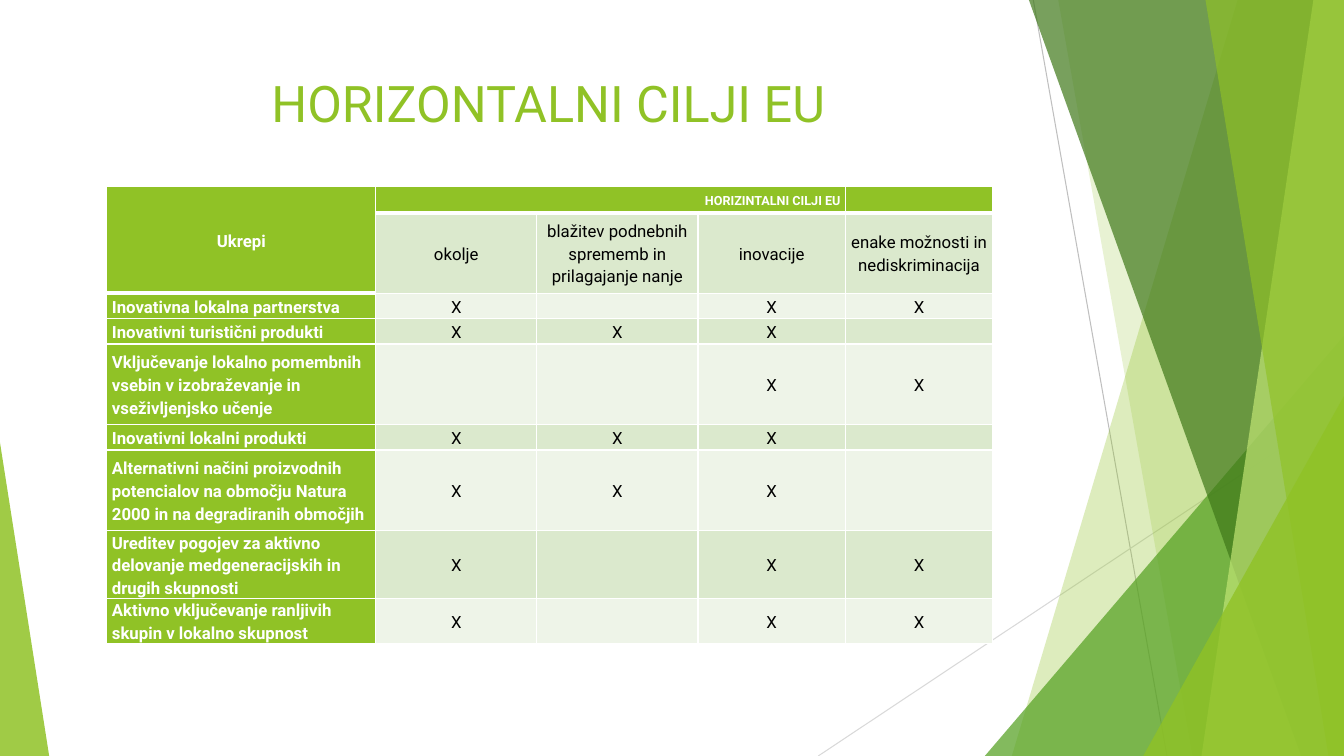
from dataclasses import dataclass

from lxml.etree import SubElement
from pptx import Presentation
from pptx.dml.color import RGBColor
from pptx.enum.shapes import MSO_CONNECTOR, MSO_SHAPE
from pptx.enum.text import MSO_ANCHOR, PP_ALIGN
from pptx.oxml.ns import qn
from pptx.util import Cm, Pt


@dataclass(frozen=True)
class Theme:
    font: str = "Roboto"
    title_size: int = 36
    body_size: int = 12
    small_size: int = 9
    lime: str = "90C226"
    green: str = "54A021"
    forest: str = "3F7819"
    pale_lime: str = "C0E474"
    band_dark: str = "DBE9CD"
    band_light: str = "EEF4E8"
    white: str = "FFFFFF"
    black: str = "000000"
    line_dark: str = "BFBFBF"
    line_light: str = "D9D9D9"


@dataclass(frozen=True)
class Box:
    """A region of the slide, in centimetres."""
    left: float
    top: float
    width: float
    height: float

    @property
    def right(self):
        return self.left + self.width

    @property
    def bottom(self):
        return self.top + self.height


THEME = Theme()
PAGE = Box(0, 0, 33.87, 19.05)
TITLE = Box(1.88, 1.7, 23.88, 3.66)
TABLE = Box(2.69, 4.7, 22.33, 11.15)

COLUMN_WIDTHS = [6.78, 4.06, 4.06, 3.72, 3.71]
ROW_HEIGHTS = [0.66, 2.03, 0.64, 0.64, 2.03, 0.64, 2.03, 1.5, 0.98]
GOALS = [
    "okolje",
    "blažitev podnebnih sprememb in prilagajanje nanje",
    "inovacije",
    "enake možnosti in nediskriminacija",
]
# Each measure with one mark per goal it serves
MEASURES = [
    ("Inovativna lokalna partnerstva", "X-XX"),
    ("Inovativni turistični produkti", "XXX-"),
    ("Vključevanje lokalno pomembnih vsebin v izobraževanje in vseživljenjsko učenje", "--XX"),
    ("Inovativni lokalni produkti", "XXX-"),
    ("Alternativni načini proizvodnih potencialov na območju Natura 2000 "
     "in na degradiranih območjih", "XXX-"),
    ("Ureditev pogojev za aktivno delovanje medgeneracijskih in drugih skupnosti", "X-XX"),
    ("Aktivno vključevanje ranljivih skupin v lokalno skupnost", "X-XX"),
]


def rgb(color):
    return RGBColor.from_string(color)


def style_font(font, size, color, bold=False):
    font.name = THEME.font
    font.size = Pt(size)
    font.bold = bold
    font.color.rgb = rgb(color)


def paint(shape, color, opacity):
    """Fill a shape with a see-through colour, without outline or shadow."""
    shape.shadow.inherit = False
    shape.line.fill.background()
    shape.fill.solid()
    shape.fill.fore_color.rgb = rgb(color)
    tint = shape.fill._xPr.find(qn("a:solidFill"))[0]
    SubElement(tint, qn("a:alpha"), val=str(opacity * 1000))


def add_ray(slide, start, end, color):
    ray = slide.shapes.add_connector(
        MSO_CONNECTOR.STRAIGHT, *(Cm(value) for value in start + end))
    ray.line.color.rgb = rgb(color)
    ray.line.width = Pt(0.75)
    SubElement(ray._element.spPr, qn("a:effectLst"))


def add_blade(slide, box, top_x, bottom_x, color, opacity):
    """Draw a slanted facet that fills the box up to its right side."""
    corners = [(top_x, box.top), (box.right, box.top),
               (box.right, box.bottom), (bottom_x, box.bottom)]
    points = [(Cm(x), Cm(y)) for x, y in corners]
    builder = slide.shapes.build_freeform(*points[0])
    builder.add_line_segments(points[1:], close=True)
    paint(builder.convert_to_shape(), color, opacity)


def add_corner(slide, box, apex, color, opacity):
    """Draw a triangle whose apex lies at a share of the box width."""
    triangle = slide.shapes.add_shape(
        MSO_SHAPE.ISOSCELES_TRIANGLE,
        Cm(box.left), Cm(box.top), Cm(box.width), Cm(box.height))
    triangle.adjustments[0] = apex
    paint(triangle, color, opacity)


def add_right_corner(slide, page, left, top, color, opacity):
    box = Box(left, top, page.right - left, page.bottom - top)
    add_corner(slide, box, 1, color, opacity)


def add_facets(slide, page):
    """Draw the faceted decoration along both sides of the page."""
    add_ray(slide, (page.right - 7.83, page.top), (page.right - 4.46, page.bottom),
            THEME.line_dark)
    add_ray(slide, (page.right, page.top + 10.24), (page.right - 13.25, page.bottom),
            THEME.line_light)
    add_blade(slide, page, page.right - 2.68, page.right - 8.37, THEME.lime, 30)
    add_blade(slide, page, page.right - 7.2, page.right - 3.82, THEME.lime, 20)
    add_right_corner(slide, page, page.right - 9.05, page.top + 8.46, THEME.green, 72)
    add_blade(slide, page, page.right - 7.94, page.right - 1.08, THEME.forest, 70)
    add_blade(slide, page, page.right - 0.77, page.right - 3.59, THEME.pale_lime, 70)
    add_blade(slide, page, page.right - 3.49, page.right - 0.39, THEME.lime, 65)
    add_right_corner(slide, page, page.right - 5.06, page.top + 9.98, THEME.lime, 80)
    add_corner(slide, Box(page.left, page.bottom - 7.9, 1.24, 7.9), 0, THEME.lime, 85)


def fill_title(slide, box):
    title = slide.shapes.title
    title.left, title.top = Cm(box.left), Cm(box.top)
    title.width, title.height = Cm(box.width), Cm(box.height)
    frame = title.text_frame
    frame.text = "HORIZONTALNI CILJI EU"
    frame.word_wrap = True
    frame.vertical_anchor = MSO_ANCHOR.TOP
    para = frame.paragraphs[0]
    para.alignment = PP_ALIGN.CENTER
    style_font(para.font, THEME.title_size, THEME.lime)


def draw_borders(cell, bottom_width):
    properties = cell._tc.get_or_add_tcPr()
    for side, width in (("L", 1), ("R", 1), ("T", 1), ("B", bottom_width)):
        line = SubElement(properties, qn(f"a:ln{side}"), w=str(Pt(width)))
        fill = SubElement(line, qn("a:solidFill"))
        SubElement(fill, qn("a:srgbClr"), val=THEME.white)


def fill_cell(cell, text, fill, color, bold=False, size=THEME.body_size,
              align=PP_ALIGN.CENTER, bottom_width=1):
    draw_borders(cell, bottom_width)
    cell.fill.solid()
    cell.fill.fore_color.rgb = rgb(fill)
    cell.vertical_anchor = MSO_ANCHOR.MIDDLE
    cell.margin_left = cell.margin_right = Cm(0.13)
    cell.margin_top = cell.margin_bottom = 0
    cell.text = text
    para = cell.text_frame.paragraphs[0]
    para.alignment = align
    para.line_spacing = 1.15
    style_font(para.font, size, color, bold)
    if not text:
        SubElement(para._p, qn("a:endParaRPr"), sz=str(size * 100))


def add_goals_table(slide, box):
    table = slide.shapes.add_table(
        len(ROW_HEIGHTS), len(COLUMN_WIDTHS),
        Cm(box.left), Cm(box.top), Cm(box.width), Cm(box.height)).table
    for column, width in zip(table.columns, COLUMN_WIDTHS):
        column.width = Cm(width)
    for row, height in zip(table.rows, ROW_HEIGHTS):
        row.height = Cm(height)

    table.cell(0, 0).merge(table.cell(1, 0))
    table.cell(0, 1).merge(table.cell(0, 3))
    headings = ["Ukrepi", "HORIZINTALNI CILJI EU", "", "", ""]
    for index, text in enumerate(headings):
        fill_cell(table.cell(0, index), text, THEME.lime, THEME.white, bold=True,
                  size=THEME.small_size if index else THEME.body_size,
                  align=PP_ALIGN.RIGHT if index else PP_ALIGN.CENTER, bottom_width=3)

    rows = [("", GOALS)] + [(name, marks.replace("-", " ").replace(" ", "-"))
                            for name, marks in MEASURES]
    for index, (name, entries) in enumerate(rows, start=1):
        fill_cell(table.cell(index, 0), name, THEME.lime, THEME.white, bold=True,
                  align=PP_ALIGN.LEFT, bottom_width=3 if index == 1 else 1)
        band = THEME.band_dark if index % 2 else THEME.band_light
        for column, entry in enumerate(entries, start=1):
            fill_cell(table.cell(index, column), entry.strip("-"), band, THEME.black)


def main():
    deck = Presentation()
    deck.slide_width, deck.slide_height = Cm(PAGE.width), Cm(PAGE.height)
    slide = deck.slides.add_slide(deck.slide_layouts[5])
    add_facets(slide, PAGE)
    fill_title(slide, TITLE)
    add_goals_table(slide, TABLE)
    deck.save("out.pptx")


if __name__ == "__main__":
    main()
